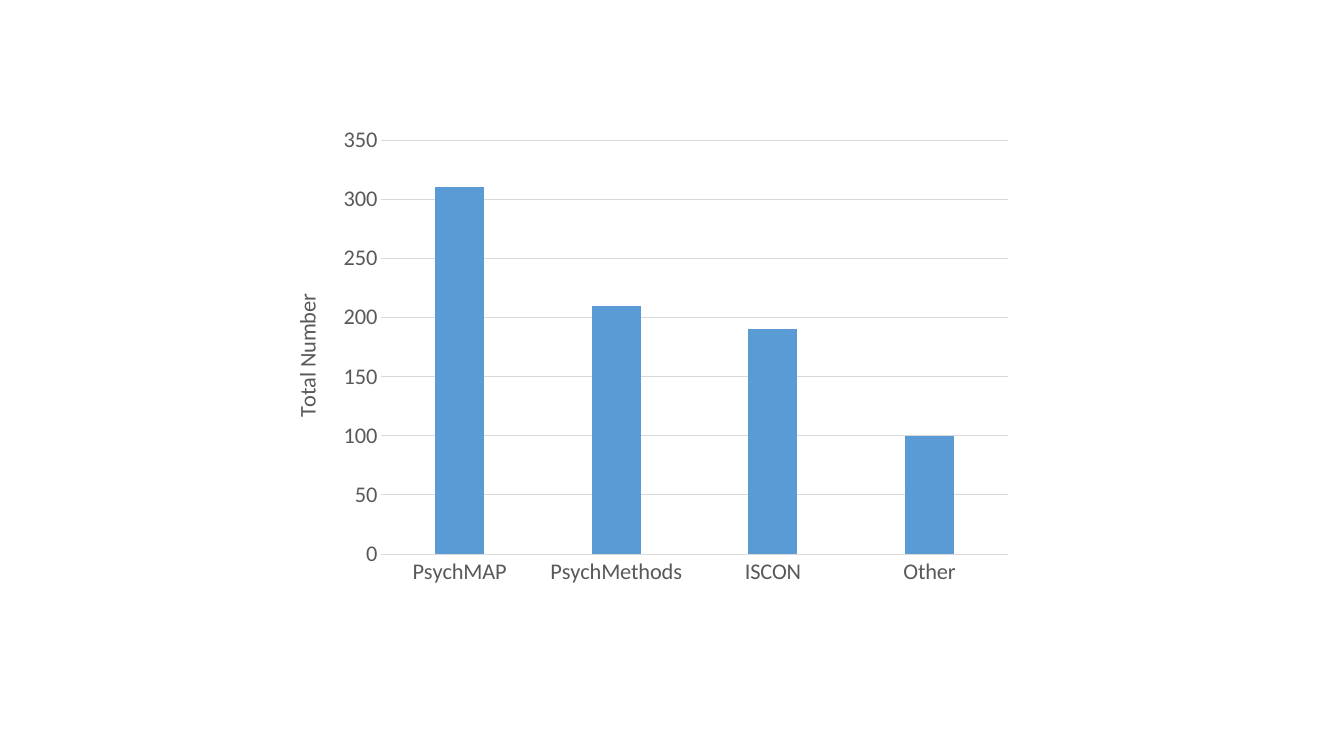
from pptx import Presentation
from pptx.chart.data import CategoryChartData
from pptx.dml.color import RGBColor
from pptx.enum.chart import XL_CHART_TYPE, XL_TICK_MARK
from pptx.util import Emu, Pt

COLUMN = XL_CHART_TYPE.COLUMN_CLUSTERED
NO_TICK = XL_TICK_MARK.NONE

COLORS = {"bar": "5B9BD5", "text": "595959", "line": "D9D9D9"}
FONT = "Calibri"
SIZE = 16
TITLE = "Total Number"
SERIES = "Series 1"
GROUPS = {"PsychMAP": 310, "PsychMethods": 210, "ISCON": 190, "Other": 100}
SLIDE = (1344, 756)
PLACE = (270, 117, 753, 478)
SCALE = 914400 / 100.8


def px(count):
    return Emu(round(count * SCALE))


def color(name):
    return RGBColor.from_string(COLORS[name])


def style(font, size=SIZE, name="text"):
    font.name = FONT
    font.size = Pt(size)
    font.bold = False
    font.color.rgb = color(name)


def write(frame, text, **form):
    frame.text = text
    style(frame.paragraphs[0].runs[0].font, **form)


def rule(line):
    line.color.rgb = color("line")
    line.width = Pt(0.75)


def add_bars(slide):
    data = CategoryChartData()
    data.categories = list(GROUPS)
    data.add_series(SERIES, list(GROUPS.values()))
    chart = slide.shapes.add_chart(COLUMN, *map(px, PLACE), data).chart
    style(chart.font)
    chart.has_legend = False
    chart.has_title = False

    plot = chart.plots[0]
    plot.gap_width = 219
    plot.overlap = -27
    plot.vary_by_categories = False
    fill = plot.series[0].format.fill
    fill.solid()
    fill.fore_color.rgb = color("bar")

    base, scale = chart.category_axis, chart.value_axis
    for axis in (base, scale):
        axis.major_tick_mark = NO_TICK
        axis.minor_tick_mark = NO_TICK
        style(axis.tick_labels.font)
    rule(base.format.line)
    scale.format.line.fill.background()
    scale.minimum_scale, scale.maximum_scale = 0, 350
    scale.major_unit = 50
    scale.has_major_gridlines = True
    rule(scale.major_gridlines.format.line)
    write(scale.axis_title.text_frame, TITLE)


def main():
    deck = Presentation()
    deck.slide_width, deck.slide_height = map(px, SLIDE)
    add_bars(deck.slides.add_slide(deck.slide_layouts[6]))
    deck.save("out.pptx")


if __name__ == "__main__":
    main()
